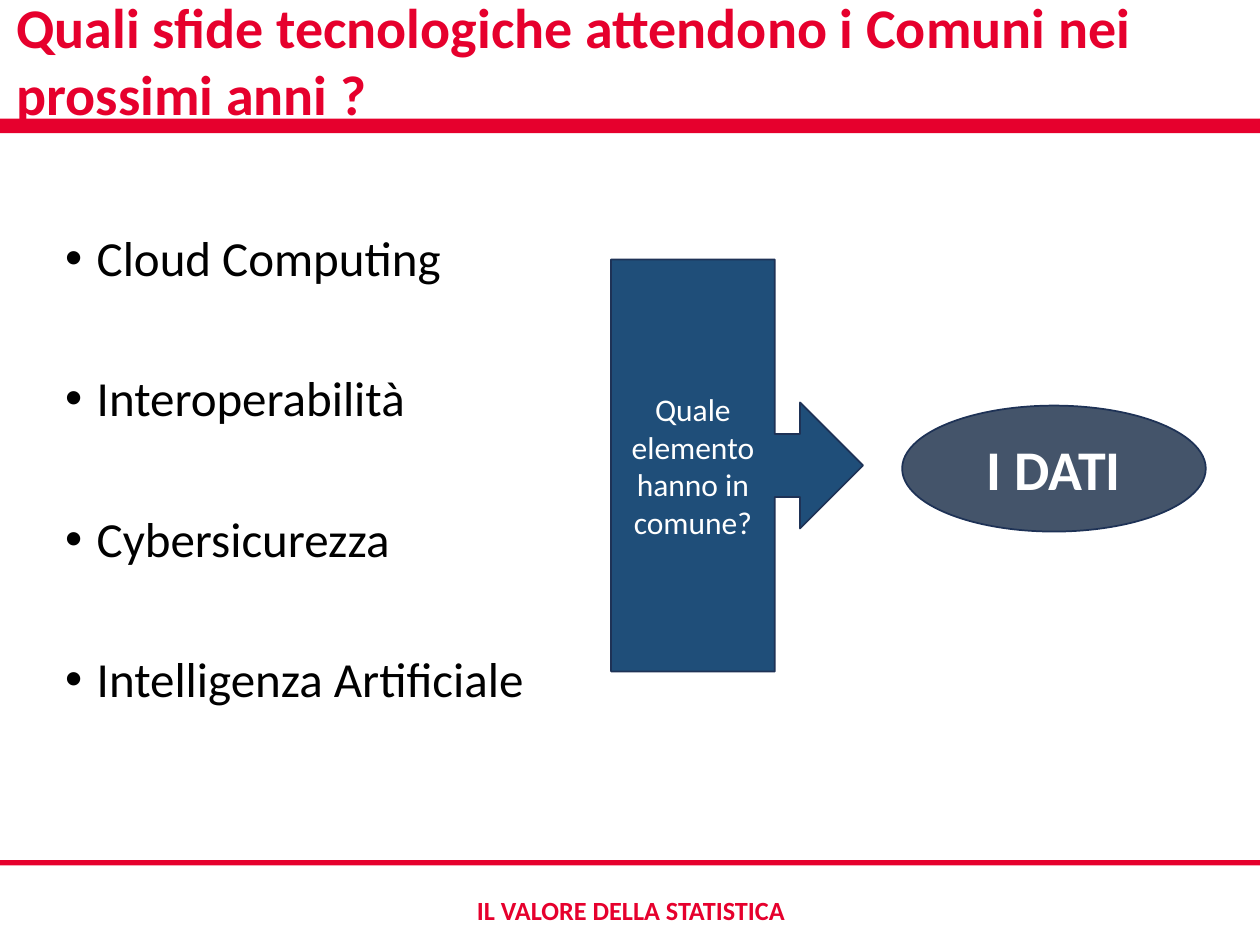
"""Build the slide on the technological challenges facing Italian municipalities."""
from lxml.etree import SubElement
from pptx import Presentation
from pptx.dml.color import RGBColor
from pptx.enum.shapes import MSO_SHAPE
from pptx.enum.text import MSO_ANCHOR, MSO_AUTO_SIZE, PP_ALIGN
from pptx.oxml.ns import qn
from pptx.util import Pt

COLORS = {
    "red": "E6002D",
    "blue": "1F4E79",
    "slate": "44546A",
    "outline": "1E3256",
    "white": "FFFFFF",
    "black": "000000",
}


def write(paragraph, text, size, color, bold=False, align=PP_ALIGN.LEFT, bullet=None):
    paragraph.text = text
    paragraph.alignment = align
    if bullet:
        properties = paragraph._p.get_or_add_pPr()
        properties.set("marL", str(Pt(18)))
        properties.set("indent", str(Pt(-18)))
        SubElement(properties, qn("a:buFont"), typeface="Arial")
        SubElement(properties, qn("a:buChar"), char=bullet)
    for run in paragraph.runs:
        run.font.name = "Calibri"
        run.font.size = Pt(size)
        run.font.bold = bold
        run.font.color.rgb = RGBColor.from_string(COLORS[color])


presentation = Presentation()
presentation.slide_width, presentation.slide_height = Pt(720), Pt(540)
slide = presentation.slides.add_slide(presentation.slide_layouts[5])
shapes = slide.shapes

for top, height in ((491.5, 3), (67.8, 8.4)):
    rule = shapes.add_shape(MSO_SHAPE.RECTANGLE, 0, Pt(top), Pt(720), Pt(height))
    rule.shadow.inherit = False
    rule.fill.solid()
    rule.fill.fore_color.rgb = RGBColor.from_string(COLORS["red"])
    rule.line.fill.background()

title = shapes.title
title.left, title.top, title.width, title.height = Pt(2.2), Pt(2.9), Pt(709), Pt(62.6)
title.text_frame.auto_size = MSO_AUTO_SIZE.NONE
title.text_frame.vertical_anchor = MSO_ANCHOR.MIDDLE
write(title.text_frame.paragraphs[0],
      "Quali sfide tecnologiche attendono i Comuni nei prossimi anni ?",
      size=32, color="red", bold=True)

footer = shapes.add_textbox(Pt(152.6), Pt(507.6), Pt(416), Pt(25.2)).text_frame
footer.word_wrap = True
write(footer.paragraphs[0], "IL VALORE DELLA STATISTICA",
      size=15, color="red", bold=True, align=PP_ALIGN.CENTER)

challenges = shapes.add_textbox(Pt(30.2), Pt(130.2), Pt(300), Pt(300)).text_frame
challenges.word_wrap = True
for index, challenge in enumerate(
    ("Cloud Computing", "Interoperabilità", "Cybersicurezza", "Intelligenza Artificiale")
):
    paragraph = challenges.add_paragraph() if index else challenges.paragraphs[0]
    write(paragraph, challenge, size=28, color="black", bullet="•")
    paragraph.line_spacing = 0.9
    paragraph.space_before = Pt(50 if index else 0)

for preset, left, top, width, height, fill, text, size, bold in (
    (MSO_SHAPE.RIGHT_ARROW_CALLOUT, 349.2, 148.3, 144, 235.4, "blue",
     "Quale elemento hanno in comune?", 18, False),
    (MSO_SHAPE.OVAL, 515.5, 231.8, 173.5, 72, "slate", "I DATI", 32, True),
):
    step = shapes.add_shape(preset, Pt(left), Pt(top), Pt(width), Pt(height))
    step.shadow.inherit = False
    step.fill.solid()
    step.fill.fore_color.rgb = RGBColor.from_string(COLORS[fill])
    step.line.color.rgb = RGBColor.from_string(COLORS["outline"])
    step.line.width = Pt(1)
    step.text_frame.word_wrap = True
    step.text_frame.vertical_anchor = MSO_ANCHOR.MIDDLE
    write(step.text_frame.paragraphs[0], text, size=size, color="white",
          bold=bold, align=PP_ALIGN.CENTER)

presentation.save("out.pptx")
